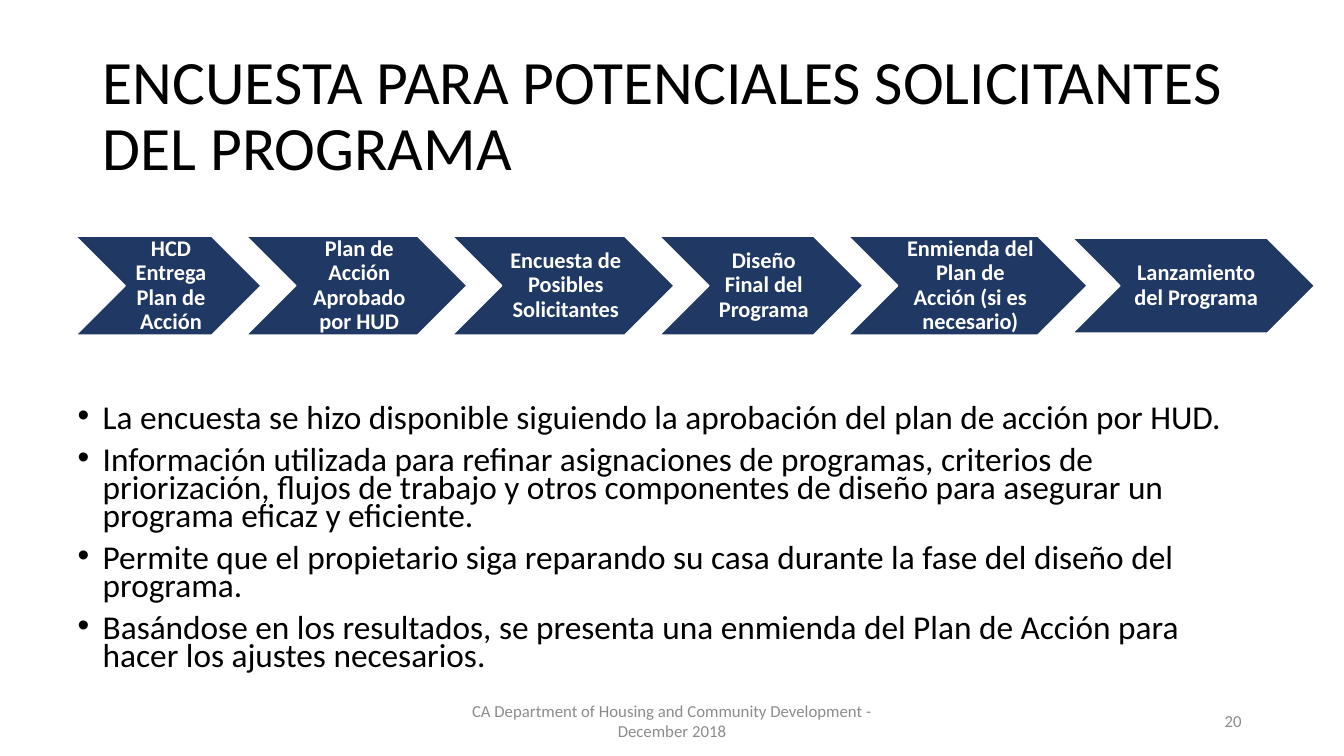
from pptx import Presentation
from pptx.dml.color import RGBColor
from pptx.enum.shapes import MSO_SHAPE
from pptx.enum.text import MSO_ANCHOR, MSO_AUTO_SIZE, PP_ALIGN
from pptx.util import Cm, Pt

BLACK = RGBColor(0x00, 0x00, 0x00)
WHITE = RGBColor(0xFF, 0xFF, 0xFF)
NAVY = RGBColor(0x20, 0x38, 0x64)
GRAY = RGBColor(0x8C, 0x8C, 0x8C)

TITLE = "ENCUESTA PARA POTENCIALES SOLICITANTES DEL PROGRAMA"
FOOTER = "CA Department of Housing and Community Development - December 2018"
SLIDE_NUMBER = "20"

# Step text, width, height (cm)
STEPS = [
    ("HCD Entrega Plan de Acción", 4.67, 2.49),
    ("Plan de Acción Aprobado por HUD", 5.56, 2.49),
    ("Encuesta de Posibles Solicitantes", 5.59, 2.49),
    ("Diseño Final del Programa", 5.13, 2.49),
    ("Enmienda del Plan de Acción (si es necesario)", 6.02, 2.49),
    ("Lanzamiento del Programa", 6.1, 2.39),
]
STEPS_LEFT, STEPS_MIDDLE, STEP_OVERLAP = 1.91, 7.2, 0.37

POINTS = [
    "La encuesta se hizo disponible siguiendo la aprobación del plan de acción por HUD.",
    "Información utilizada para refinar asignaciones de programas, criterios de "
    "priorización, flujos de trabajo y otros componentes de diseño para asegurar un "
    "programa eficaz y eficiente.",
    "Permite que el propietario siga reparando su casa durante la fase del diseño del "
    "programa.",
    "Basándose en los resultados, se presenta una enmienda del Plan de Acción para "
    "hacer los ajustes necesarios.",
]


class SlideBuilder:
    font_name = "Calibri"

    def __init__(self, slide):
        self.slide = slide

    def place(self, shape, left, top, width, height):
        shape.left, shape.top = Cm(left), Cm(top)
        shape.width, shape.height = Cm(width), Cm(height)

    def format(self, paragraph, size, color, align=PP_ALIGN.LEFT, spacing=1.0, bold=False):
        paragraph.alignment = align
        paragraph.line_spacing = spacing
        font = paragraph.font
        font.name, font.size, font.bold = self.font_name, Pt(size), bold
        font.color.rgb = color

    def prepare(self, frame, anchor):
        frame.word_wrap = True
        frame.auto_size = MSO_AUTO_SIZE.NONE
        frame.vertical_anchor = anchor

    def title(self, text, *box):
        heading = self.slide.shapes.title
        self.place(heading, *box)
        self.prepare(heading.text_frame, MSO_ANCHOR.MIDDLE)
        heading.text_frame.text = text
        self.format(heading.text_frame.paragraphs[0], 44, BLACK, spacing=0.9)

    def bullets(self, points, *box):
        body = self.slide.placeholders[1]
        self.place(body, *box)
        frame = body.text_frame
        self.prepare(frame, MSO_ANCHOR.TOP)
        frame.margin_top = Cm(1.49)
        frame.text = "\n".join(points)
        for point in frame.paragraphs:
            self.format(point, 23.8, BLACK, spacing=0.7)
            point.space_before = Pt(10)
            properties = point._p.get_or_add_pPr()
            properties.set("marL", str(Cm(0.635)))
            properties.set("indent", str(-Cm(0.635)))

    def step(self, text, left, top, width, height):
        chevron = self.slide.shapes.add_shape(
            MSO_SHAPE.CHEVRON, Cm(left), Cm(top), Cm(width), Cm(height))
        chevron.shadow.inherit = False
        chevron.fill.solid()
        chevron.fill.fore_color.rgb = NAVY
        chevron.line.color.rgb = WHITE
        chevron.line.width = Pt(1)
        frame = chevron.text_frame
        self.prepare(frame, MSO_ANCHOR.MIDDLE)
        frame.margin_left = Cm(0.18)
        frame.margin_right = frame.margin_top = frame.margin_bottom = Cm(0.05)
        frame.text = text
        self.format(frame.paragraphs[0], 16, WHITE, PP_ALIGN.CENTER, 0.9, bold=True)

    def footer(self, text, align, left, width):
        note = self.slide.shapes.add_textbox(Cm(left), Cm(17.65), Cm(width), Cm(1.02))
        self.prepare(note.text_frame, MSO_ANCHOR.MIDDLE)
        note.text_frame.text = text
        self.format(note.text_frame.paragraphs[0], 12, GRAY, align)


def main():
    presentation = Presentation()
    presentation.slide_width, presentation.slide_height = Cm(33.87), Cm(19.05)
    builder = SlideBuilder(presentation.slides.add_slide(presentation.slide_layouts[1]))

    # Title and list
    builder.title(TITLE, 2.33, 1.12, 29.21, 3.68)
    builder.bullets(POINTS, 1.7, 8.76, 29.85, 8.43)

    # Process chevrons, each nested into the one before
    left = STEPS_LEFT
    for text, width, height in STEPS:
        builder.step(text, left, STEPS_MIDDLE - height / 2, width, height)
        left += width - STEP_OVERLAP

    # Footer and slide number
    builder.footer(FOOTER, PP_ALIGN.CENTER, 11.22, 11.43)
    builder.footer(SLIDE_NUMBER, PP_ALIGN.RIGHT, 23.92, 7.62)

    presentation.save("out.pptx")


if __name__ == "__main__":
    main()
